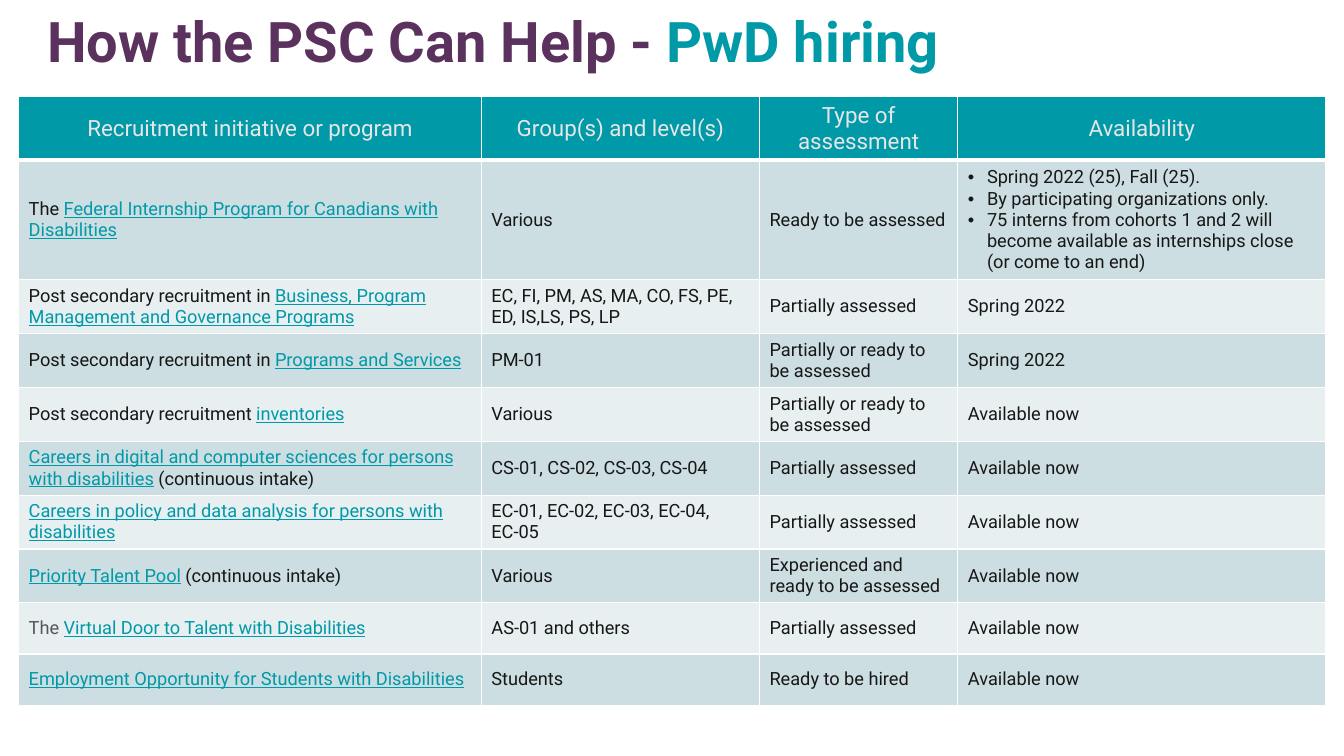
from lxml import etree
from pptx import Presentation
from pptx.dml.color import RGBColor
from pptx.enum.text import MSO_ANCHOR, PP_ALIGN
from pptx.oxml.ns import qn
from pptx.util import Cm, Pt

MIDDLE = MSO_ANCHOR.MIDDLE
LEFT, CENTER = PP_ALIGN.LEFT, PP_ALIGN.CENTER

THEME = {
    "font": "Roboto",
    "colors": {
        "purple": "5B315E", "teal": "0099A8", "header": "E7E6E6", "ink": "181717",
        "gray": "54575A", "white": "FFFFFF", "band_dark": "CCDEE1", "band_light": "E7EFF1",
    },
    "sizes": {"title": 40, "header": 16, "body": 13},
}

# Run styles: color, size, and any extra font values
STYLES = {
    "title": ("purple", "title", {"bold": True}),
    "title accent": ("teal", "title", {"bold": True}),
    "header": ("header", "header", {"bold": False}),
    "text": ("ink", "body", {}),
    "muted": ("gray", "body", {}),
    "link": ("teal", "body", {"underline": True}),
}

HEADINGS = ["Recruitment initiative or program", "Group(s) and level(s)",
            "Type of assessment", "Availability"]
COLUMN_WIDTHS = [11.66, 7.01, 5.0, 9.27]

# Program runs, groups, assessment, availability (a list is bulleted)
PROGRAMS = [
    ([("The ", "text"), ("Federal Internship Program for Canadians with Disabilities", "link")],
     "Various", "Ready to be assessed",
     ["Spring 2022 (25), Fall (25).", "By participating organizations only.",
      "75 interns from cohorts 1 and 2 will become available as internships close "
      "(or come to an end)"]),
    ([("Post secondary recruitment in ", "text"),
      ("Business, Program Management and Governance Programs", "link")],
     "EC, FI, PM, AS, MA, CO, FS, PE, ED, IS,LS, PS, LP", "Partially assessed", "Spring 2022"),
    ([("Post secondary recruitment in ", "text"), ("Programs and Services", "link")],
     "PM-01", "Partially or ready to be assessed", "Spring 2022"),
    ([("Post secondary recruitment ", "text"), ("inventories", "link")],
     "Various", "Partially or ready to be assessed", "Available now"),
    ([("Careers in digital and computer sciences for persons with disabilities", "link"),
      (" (continuous intake)", "text")],
     "CS-01, CS-02, CS-03, CS-04", "Partially assessed", "Available now"),
    ([("Careers in policy and data analysis for persons with disabilities", "link")],
     "EC-01, EC-02, EC-03, EC-04, EC-05", "Partially assessed", "Available now"),
    ([("Priority Talent Pool", "link"), (" (continuous intake)", "text")],
     "Various", "Experienced and ready to be assessed", "Available now"),
    ([("The ", "muted"), ("Virtual Door to Talent with Disabilities", "link")],
     "AS-01 and others", "Partially assessed", "Available now"),
    ([("Employment Opportunity for Students with Disabilities", "link")],
     "Students", "Ready to be hired", "Available now"),
]
ROW_HEIGHTS = [1.54, 2.92] + [1.32] * 6 + [1.29] * 2


def add_runs(paragraph, runs):
    for text, style in runs:
        color, size, extra = STYLES[style]
        run = paragraph.add_run()
        run.text = text
        run.font.color.rgb = RGBColor.from_string(THEME["colors"][color])
        values = {"name": THEME["font"], "size": Pt(THEME["sizes"][size]), **extra}
        for name, value in values.items():
            setattr(run.font, name, value)


def format_cell(cell, fill, bottom_width):
    cell.vertical_anchor = MIDDLE
    properties = cell._tc.get_or_add_tcPr()
    for side, width in {"L": 1, "R": 1, "T": 1, "B": bottom_width}.items():
        line = etree.SubElement(properties, qn(f"a:ln{side}"), w=str(Pt(width)))
        solid = etree.SubElement(line, qn("a:solidFill"))
        etree.SubElement(solid, qn("a:srgbClr"), val=THEME["colors"]["white"])
    cell.fill.solid()
    cell.fill.fore_color.rgb = RGBColor.from_string(THEME["colors"][fill])


presentation = Presentation()
presentation.slide_width, presentation.slide_height = Cm(33.87), Cm(19.05)
slide = presentation.slides.add_slide(presentation.slide_layouts[6])

# Title
title = slide.shapes.add_textbox(Cm(0.94), Cm(-0.05), Cm(29.21), Cm(2.36))
title.text_frame.word_wrap = True
title.text_frame.vertical_anchor = MIDDLE
paragraph = title.text_frame.paragraphs[0]
paragraph.line_spacing = 0.9
add_runs(paragraph, [("How the PSC Can Help - ", "title"), ("PwD hiring", "title accent")])

# Table grid
table = slide.shapes.add_table(len(ROW_HEIGHTS), len(COLUMN_WIDTHS), Cm(0.47), Cm(2.43),
                               Cm(sum(COLUMN_WIDTHS)), Cm(sum(ROW_HEIGHTS))).table
for column, width in zip(table.columns, COLUMN_WIDTHS):
    column.width = Cm(width)
for row, height in zip(table.rows, ROW_HEIGHTS):
    row.height = Cm(height)

# Header row
for cell, heading in zip(table.rows[0].cells, HEADINGS):
    format_cell(cell, "teal", 3)
    paragraph = cell.text_frame.paragraphs[0]
    paragraph.alignment = CENTER
    add_runs(paragraph, [(heading, "header")])

# Program rows
for index, (program, *details) in enumerate(PROGRAMS):
    fill = "band_light" if index % 2 else "band_dark"
    cells = table.rows[index + 1].cells
    for cell, content in zip(cells, [program, *details]):
        format_cell(cell, fill, 1)
        frame = cell.text_frame
        if content is program:
            add_runs(frame.paragraphs[0], program)
            continue
        bulleted = isinstance(content, list)
        for position, text in enumerate(content if bulleted else [content]):
            paragraph = frame.add_paragraph() if position else frame.paragraphs[0]
            paragraph.alignment = LEFT
            if bulleted:
                properties = paragraph._p.get_or_add_pPr()
                properties.set("marL", str(Cm(0.48)))
                properties.set("indent", str(Cm(-0.48)))
                etree.SubElement(properties, qn("a:buFont"), typeface="Arial")
                etree.SubElement(properties, qn("a:buChar"), char="•")
            add_runs(paragraph, [(text, "text")])

presentation.save("out.pptx")
